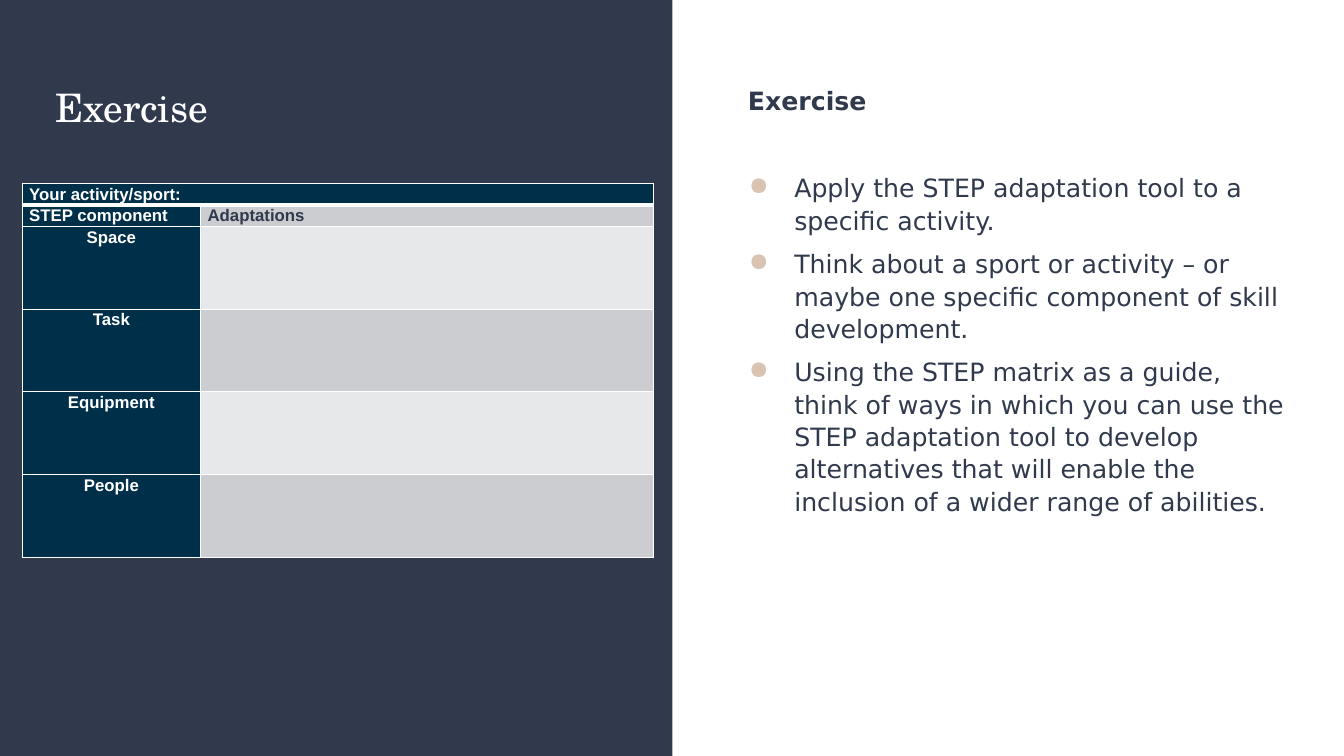
from typing import NamedTuple

from pptx import Presentation
from pptx.dml.color import RGBColor
from pptx.enum.shapes import MSO_SHAPE as Preset
from pptx.enum.text import MSO_ANCHOR as Anchor, PP_ALIGN as Align
from pptx.oxml import parse_xml
from pptx.oxml.ns import nsdecls
from pptx.util import Inches, Pt

SLATE = RGBColor(0x31, 0x39, 0x4D)
NAVY = RGBColor(0x00, 0x2F, 0x4A)
WHITE = RGBColor(0xFF, 0xFF, 0xFF)
DARK = RGBColor(0xCC, 0xCD, 0xD0)
LIGHT = RGBColor(0xE7, 0xE8, 0xE9)
TAN = RGBColor(0xD9, 0xC3, 0xB3)

SPACING = 1.07


class Row(NamedTuple):
    label: str
    note: str
    height: float
    fill: RGBColor
    align: Align = Align.LEFT


ROWS = [
    Row("Your activity/sport:", "", 0.2, NAVY),
    Row("STEP component", "Adaptations", 0.19, DARK),
] + [
    Row(name, "", 0.82, fill, Align.CENTER)
    for name, fill in zip(("Space", "Task", "Equipment", "People"), (LIGHT, DARK) * 2)
]
WIDTHS = (1.77, 4.49)

TASKS = (
    "Apply the STEP adaptation tool to a specific activity.",
    "Think about a sport or activity – or maybe one specific component of skill "
    "development.",
    "Using the STEP matrix as a guide, think of ways in which you can use the STEP "
    "adaptation tool to develop alternatives that will enable the inclusion of a "
    "wider range of abilities.",
)


def style(para, face: str, size: float, color: RGBColor, bold: bool = False) -> None:
    font = para.font
    font.name, font.size, font.bold = face, Pt(size), bold
    font.color.rgb = color


def add_box(slide, left: float, top: float, width: float, height: float):
    """Add a wrapping text box and return its text frame."""
    box = slide.shapes.add_textbox(*map(Inches, (left, top, width, height)))
    frame = box.text_frame
    frame.word_wrap = True
    frame.vertical_anchor = Anchor.TOP
    frame.margin_left = frame.margin_right = Inches(0.1)
    frame.margin_top = frame.margin_bottom = Inches(0.1)
    return frame


def indent(para, left: float, first: float) -> None:
    props = para._p.get_or_add_pPr()
    props.set("marL", str(Inches(left)))
    props.set("indent", str(Inches(first)))


def add_bullet(para) -> None:
    props = para._p.get_or_add_pPr()
    props.append(parse_xml(
        f'<a:buClr {nsdecls("a")}><a:srgbClr val="{TAN}"/></a:buClr>'))
    props.append(parse_xml(f'<a:buChar {nsdecls("a")} char="●"/>'))


def set_borders(cell, top: float, bottom: float) -> None:
    """Draw white borders; the side ones are one point wide."""
    props = cell._tc.get_or_add_tcPr()
    sides = (("L", 1), ("R", 1), ("T", top), ("B", bottom))
    for index, (side, width) in enumerate(sides):
        props.insert(index, parse_xml(
            f'<a:ln{side} {nsdecls("a")} w="{Pt(width)}"><a:solidFill>'
            f'<a:srgbClr val="{WHITE}"/></a:solidFill></a:ln{side}>'))


def fill_cell(cell, text: str, fill: RGBColor, color: RGBColor, align: Align) -> None:
    cell.margin_left = cell.margin_right = Inches(0.07)
    cell.margin_top = cell.margin_bottom = 0
    cell.fill.solid()
    cell.fill.fore_color.rgb = fill
    para = cell.text_frame.paragraphs[0]
    para.text = text
    para.alignment = align
    para.line_spacing = SPACING
    style(para, "Arial", 12, color, True)


def add_panel(slide) -> None:
    panel = slide.shapes.add_shape(Preset.RECTANGLE, 0, 0, Inches(6.67), Inches(7.5))
    panel.shadow.inherit = False
    panel.fill.solid()
    panel.fill.fore_color.rgb = SLATE
    panel.line.fill.background()


def add_title(slide) -> None:
    para = add_box(slide, 0.45, 0.73, 5.4, 0.8).paragraphs[0]
    para.text = "Exercise"
    style(para, "TeX Gyre Schola", 28, WHITE)


def add_tasks(slide) -> None:
    frame = add_box(slide, 7.11, 0.73, 5.77, 6)
    head = frame.paragraphs[0]
    head.text = "Exercise"
    head.line_spacing = SPACING
    head.space_after = Pt(39)
    indent(head, 0.21, 0)
    style(head, "DejaVu Sans", 18, SLATE, True)
    for task in TASKS:
        para = frame.add_paragraph()
        para.text = task
        para.line_spacing = SPACING
        para.space_after = Pt(8)
        indent(para, 0.67, -0.45)
        add_bullet(para)
        style(para, "DejaVu Sans", 18, SLATE)


def add_grid(slide) -> None:
    height = sum(row.height for row in ROWS)
    table = slide.shapes.add_table(
        len(ROWS), len(WIDTHS), Inches(0.22), Inches(1.82),
        Inches(sum(WIDTHS)), Inches(height)).table
    for column, width in zip(table.columns, WIDTHS):
        column.width = Inches(width)
    for index, row in enumerate(ROWS):
        table.rows[index].height = Inches(row.height)
        label, note = table.cell(index, 0), table.cell(index, 1)
        fill_cell(label, row.label, NAVY, WHITE, row.align)
        fill_cell(note, row.note, row.fill, SLATE, Align.LEFT)
        for cell in (label, note):
            set_borders(cell, 3 if index == 1 else 1, 3 if index == 0 else 1)
    table.cell(0, 0).merge(table.cell(0, 1))


def main() -> None:
    deck = Presentation()
    deck.slide_width, deck.slide_height = Inches(13.33), Inches(7.5)
    slide = deck.slides.add_slide(deck.slide_layouts[6])
    add_panel(slide)
    add_title(slide)
    add_tasks(slide)
    add_grid(slide)
    deck.save("out.pptx")


if __name__ == "__main__":
    main()
